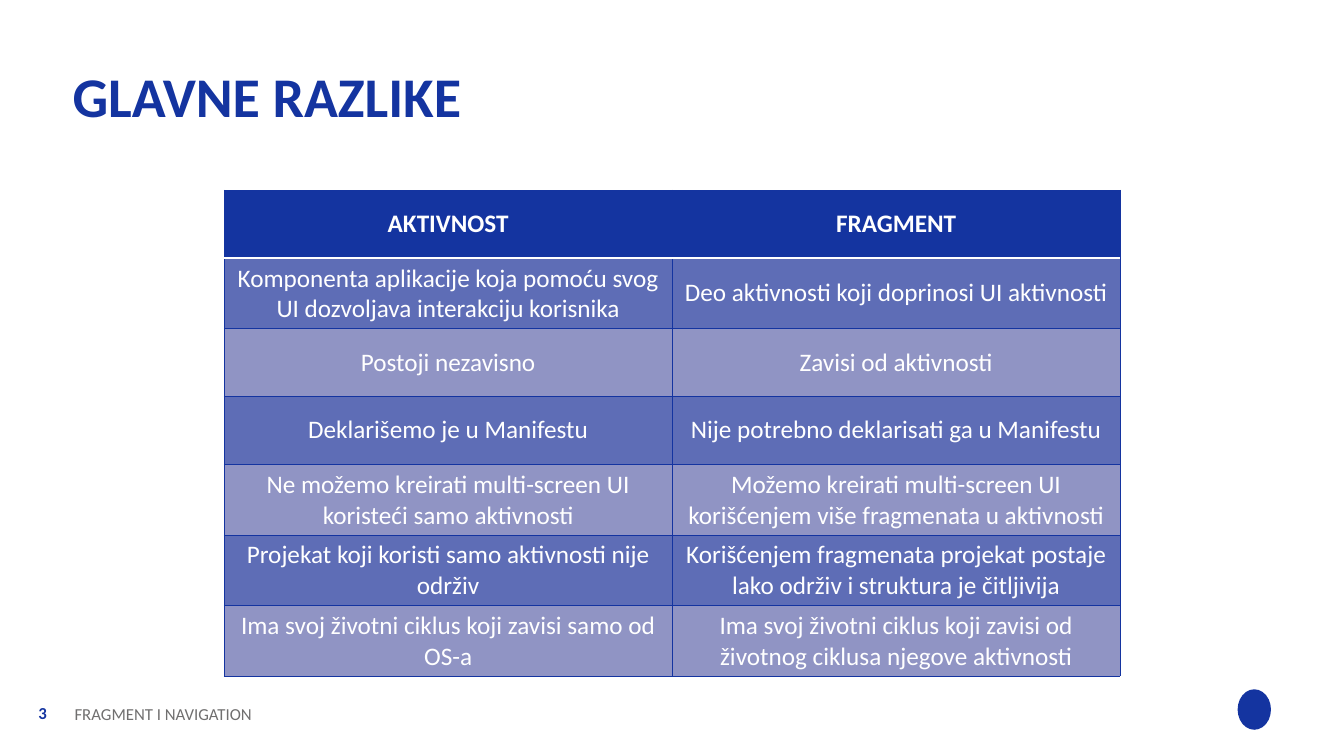
from lxml.etree import SubElement
from pptx import Presentation
from pptx.dml.color import RGBColor
from pptx.enum.shapes import MSO_SHAPE
from pptx.enum.text import MSO_ANCHOR, PP_ALIGN
from pptx.oxml.ns import qn
from pptx.util import Cm, Pt

FONT = "Calibri"
COLORS = {
    "blue": "1434A0",
    "dark": "5E6DB6",
    "light": "9094C4",
    "white": "FFFFFF",
    "gray": "706F6F",
}
ROWS = [
    ("AKTIVNOST", "FRAGMENT"),
    ("Komponenta aplikacije koja pomoću svog UI dozvoljava interakciju korisnika",
     "Deo aktivnosti koji doprinosi UI aktivnosti"),
    ("Postoji nezavisno", "Zavisi od aktivnosti"),
    ("Deklarišemo je u Manifestu", "Nije potrebno deklarisati ga u Manifestu"),
    ("Ne možemo kreirati multi-screen UI koristeći samo aktivnosti",
     "Možemo kreirati multi-screen UI korišćenjem više fragmenata u aktivnosti"),
    ("Projekat koji koristi samo aktivnosti nije održiv",
     "Korišćenjem fragmenata projekat postaje lako održiv i struktura je čitljivija"),
    ("Ima svoj životni ciklus koji zavisi samo od OS-a",
     "Ima svoj životni ciklus koji zavisi od životnog ciklusa njegove aktivnosti"),
]


def color(name):
    return RGBColor.from_string(COLORS[name])


def style(para, size, tint, bold=False):
    font = para.font
    font.name, font.size, font.bold = FONT, Pt(size), bold
    font.color.rgb = color(tint)


def add_text(slide, box, text, size, tint, bold=False, anchor=MSO_ANCHOR.MIDDLE):
    """Add one line of text without margins and return its paragraph."""
    frame = slide.shapes.add_textbox(*map(Cm, box)).text_frame
    frame.word_wrap = True
    frame.vertical_anchor = anchor
    frame.margin_left = frame.margin_right = 0
    frame.margin_top = frame.margin_bottom = 0
    para = frame.paragraphs[0]
    para.text = text
    style(para, size, tint, bold)
    return para


def add_title(slide, box):
    para = add_text(slide, box, "GLAVNE RAZLIKE", 40, "blue", True)
    para.line_spacing = 0.7


def set_edge(cell, side, tint, width):
    line = SubElement(cell._tc.get_or_add_tcPr(), qn(f"a:ln{side}"), w=str(Pt(width)))
    fill = SubElement(line, qn("a:solidFill"))
    SubElement(fill, qn("a:srgbClr"), val=COLORS[tint])


def fill_cell(cell, text, row):
    """Style a cell by its row: a header, then dark and light bands."""
    head = row == 0
    for side in "LRTB":
        under = (row, side) in ((0, "B"), (1, "T"))
        set_edge(cell, side, *(("white", 1) if under else ("blue", 0.5)))
    cell.fill.solid()
    cell.fill.fore_color.rgb = color("blue" if head else "dark" if row % 2 else "light")
    cell.vertical_anchor = MSO_ANCHOR.MIDDLE
    para = cell.text_frame.paragraphs[0]
    para.text = text
    para.alignment = PP_ALIGN.CENTER
    style(para, 18, "white", head)


def add_grid(slide, box):
    table = slide.shapes.add_table(len(ROWS), 2, *map(Cm, box)).table
    for row, texts in enumerate(ROWS):
        for col, text in enumerate(texts):
            fill_cell(table.cell(row, col), text, row)


def add_footer(slide, box):
    """Place the page number, the deck name and a plain mark."""
    left, top, width, height = box
    add_text(slide, (left, top, 0.76, height), "3", 12, "blue", True)
    add_text(slide, (left + 0.91, top, 24.77, height), "FRAGMENT I NAVIGATION",
             12, "gray", anchor=MSO_ANCHOR.BOTTOM)
    size = 0.84
    mark = slide.shapes.add_shape(
        MSO_SHAPE.OVAL, Cm(left + width - size), Cm(top - 0.33), Cm(size), Cm(1.02))
    mark.shadow.inherit = False
    mark.fill.solid()
    mark.fill.fore_color.rgb = color("blue")
    mark.line.fill.background()


def main():
    deck = Presentation()
    deck.slide_width, deck.slide_height = Cm(33.87), Cm(19.05)
    slide = deck.slides.add_slide(deck.slide_layouts[6])
    add_title(slide, (1.83, 1.42, 30.18, 2.36))
    add_grid(slide, (5.65, 4.79, 22.58, 11.97))
    add_footer(slide, (0.97, 17.7, 31.06, 0.53))
    deck.save("out.pptx")


if __name__ == "__main__":
    main()
